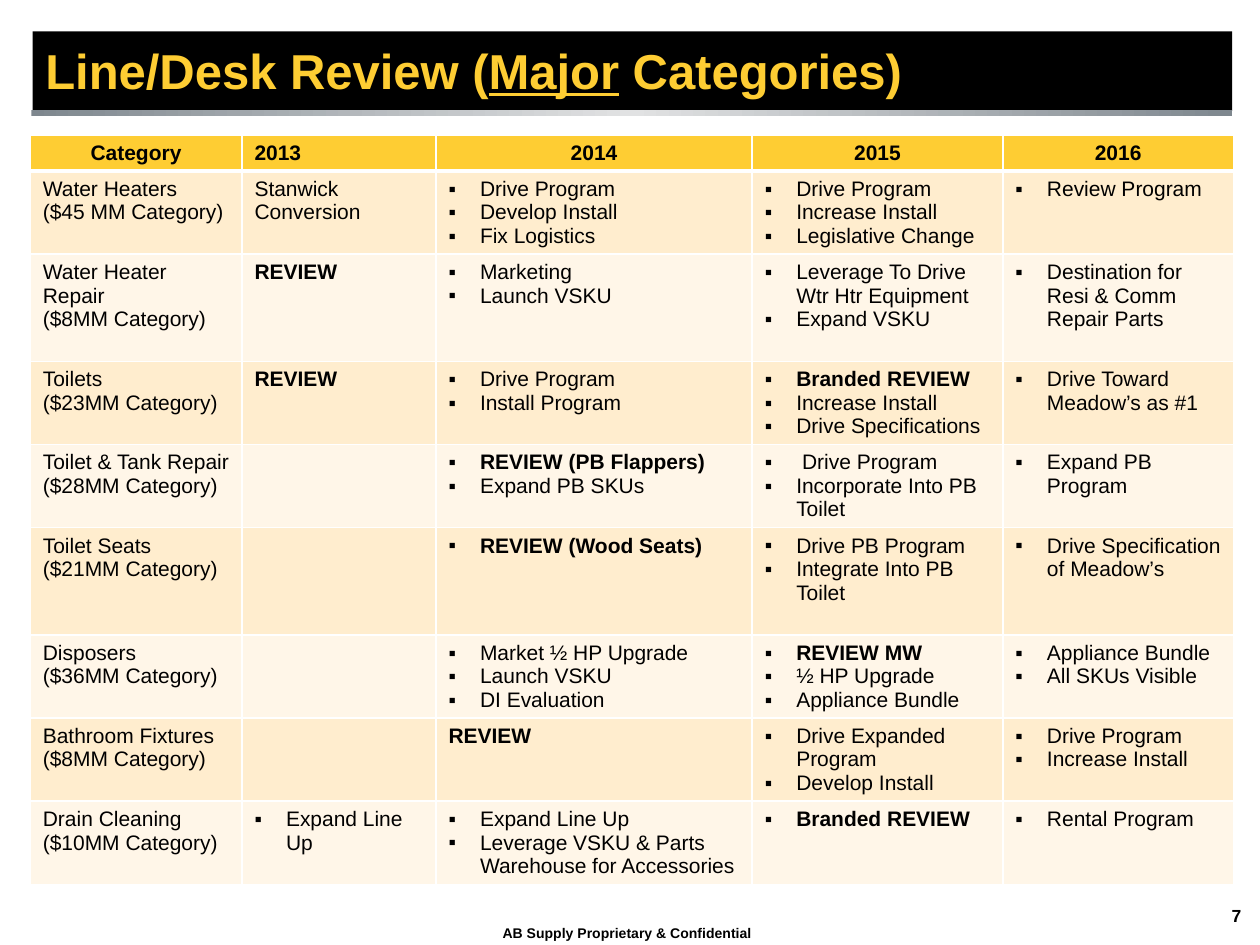
from copy import deepcopy

from lxml import etree
from pptx import Presentation
from pptx import util as u
from pptx.dml.color import RGBColor
from pptx.enum import shapes, text
from pptx.oxml import ns

INK = {"black": "000000", "gold": "FECD33", "white": "FFFFFF",
       "dark": "FFEDCE", "light": "FFF6E8", "steel": "7E878E", "shine": "E1E2E3"}
FONT = "Arial"
LEFT, MID = text.PP_ALIGN.LEFT, text.PP_ALIGN.CENTER

WIDTHS = [1.68, 1.54, 2.51, 1.99, 1.83]
HEAD = ["Category", "2013", "2014", "2015", "2016"]
HEAD_H, ROW_H, TALL_H = 0.28, 0.66, 0.85
TALL = {2, 5}
PLAIN = {"REVIEW", "Stanwick Conversion"}

# One row per category; each cell is a list of lines
ROWS = [
    [["Water Heaters", "($45 MM Category)"], ["Stanwick Conversion"],
     ["Drive Program", "Develop Install", "Fix Logistics"],
     ["Drive Program", "Increase Install", "Legislative Change"],
     ["Review Program"]],
    [["Water Heater Repair", "($8MM Category)"], ["REVIEW"],
     ["Marketing", "Launch VSKU"],
     ["Leverage To Drive Wtr Htr Equipment", "Expand VSKU"],
     ["Destination for Resi & Comm Repair Parts"]],
    [["Toilets", "($23MM Category)"], ["REVIEW"],
     ["Drive Program", "Install Program"],
     ["Branded REVIEW", "Increase Install", "Drive Specifications"],
     ["Drive Toward Meadow’s as #1"]],
    [["Toilet & Tank Repair", "($28MM Category)"], [],
     ["REVIEW (PB Flappers)", "Expand PB SKUs"],
     [" Drive Program", "Incorporate Into PB Toilet"],
     ["Expand PB Program"]],
    [["Toilet Seats", "($21MM Category)"], [],
     ["REVIEW (Wood Seats)"],
     ["Drive PB Program", "Integrate Into PB Toilet"],
     ["Drive Specification of Meadow’s"]],
    [["Disposers", "($36MM Category)"], [],
     ["Market ½ HP Upgrade", "Launch VSKU", "DI Evaluation"],
     ["REVIEW MW", "½ HP Upgrade", "Appliance Bundle"],
     ["Appliance Bundle", "All SKUs Visible"]],
    [["Bathroom Fixtures", "($8MM Category)"], [],
     ["REVIEW"],
     ["Drive Expanded Program", "Develop Install"],
     ["Drive Program", "Increase Install"]],
    [["Drain Cleaning", "($10MM Category)"], ["Expand Line Up"],
     ["Expand Line Up", "Leverage VSKU & Parts Warehouse for Accessories"],
     ["Branded REVIEW"],
     ["Rental Program"]],
]


def rgb(name):
    return RGBColor.from_string(INK[name])


def inch(box):
    return [u.Inches(v) for v in box]


def style(font, size, bold=False, ink="black"):
    font.name, font.size, font.bold = FONT, u.Pt(size), bold
    font.color.rgb = rgb(ink)


def add_run(para, words, *look):
    run = para.add_run()
    run.text = words
    style(run.font, *look)
    return run


def add_bar(slide, box):
    bar = slide.shapes.add_shape(shapes.MSO_SHAPE.RECTANGLE, *inch(box))
    bar.shadow.inherit = False
    bar.line.fill.background()
    return bar


def add_title(slide, box):
    x, y, w, h = box
    # Black band
    band = add_bar(slide, (x, y, w, h))
    band.fill.solid()
    band.fill.fore_color.rgb = rgb("black")
    # Metallic strip below it
    strip = add_bar(slide, (x - 0.01, y + h - 0.01, w + 0.01, 0.05))
    strip.fill.gradient()
    strip.fill.gradient_angle = 0
    stops = strip._element.spPr.find(".//" + ns.qn("a:gsLst"))
    stops.insert(1, deepcopy(stops[0]))
    for stop, spot, ink in zip(strip.fill.gradient_stops, (0, 0.5, 1),
                               ("steel", "shine", "steel")):
        stop.position = spot
        stop.color.rgb = rgb(ink)
    # Heading, brought in front of the band
    title = slide.shapes.title
    title.left, title.top, title.width, title.height = inch((x, y - 0.01, 7.09, h))
    slide.shapes._spTree.append(title._element)
    frame = title.text_frame
    frame.word_wrap = True
    frame.auto_size = text.MSO_AUTO_SIZE.NONE
    frame.vertical_anchor = text.MSO_ANCHOR.MIDDLE
    para = frame.paragraphs[0]
    para.alignment = LEFT
    for words in ("Line/Desk Review (", "Major", " Categories)"):
        run = add_run(para, words, 28, True, "gold")
        run.font.underline = words == "Major"


def add_bullet(para):
    props = para._p.get_or_add_pPr()
    props.set("marL", str(u.Inches(0.25)))
    props.set("indent", str(u.Inches(-0.25)))
    etree.SubElement(props, ns.qn("a:buFont"), typeface=FONT)
    etree.SubElement(props, ns.qn("a:buChar"), char="▪")


def add_edges(cell, row):
    props = cell._tc.get_or_add_tcPr()
    thick = {0: "lnB", 1: "lnT"}.get(row)
    for spot, side in enumerate(("lnL", "lnR", "lnT", "lnB")):
        width = u.Pt(3 if side == thick else 1)
        line = etree.Element(ns.qn("a:" + side), w=str(width))
        fill = etree.SubElement(line, ns.qn("a:solidFill"))
        etree.SubElement(fill, ns.qn("a:srgbClr"), val=INK["white"])
        props.insert(spot, line)


def fill_cell(cell, lines, row, col):
    cell.fill.solid()
    cell.fill.fore_color.rgb = rgb(
        "gold" if row == 0 else "dark" if row % 2 else "light")
    add_edges(cell, row)
    frame = cell.text_frame
    for i, words in enumerate(lines):
        para = frame.add_paragraph() if i else frame.paragraphs[0]
        para.alignment = MID if row == 0 and col != 1 else LEFT
        if row and col and words not in PLAIN:
            add_bullet(para)
        add_run(para, words, 12, row == 0 or "REVIEW" in words)
    if not lines:
        style(frame.paragraphs[0].font, 12)


def add_grid(slide, box):
    data = [[[name] for name in HEAD]] + ROWS
    grid = slide.shapes.add_table(len(data), len(HEAD), *inch(box)).table
    for col, width in zip(grid.columns, WIDTHS):
        col.width = u.Inches(width)
    for r, cells in enumerate(data):
        high = HEAD_H if r == 0 else TALL_H if r in TALL else ROW_H
        grid.rows[r].height = u.Inches(high)
        for c, lines in enumerate(cells):
            fill_cell(grid.cell(r, c), lines, r, c)


def add_note(slide, box, words, size, align, anchor, wrap):
    frame = slide.shapes.add_textbox(*inch(box)).text_frame
    frame.word_wrap = wrap
    frame.vertical_anchor = anchor
    para = frame.paragraphs[0]
    para.alignment = align
    add_run(para, words, size, True)


def main():
    deck = Presentation()
    deck.slide_width, deck.slide_height = u.Inches(10), u.Inches(7.5)
    slide = deck.slides.add_slide(deck.slide_layouts[5])
    add_title(slide, (0.26, 0.25, 9.52, 0.63))
    add_grid(slide, (0.24, 1.07, 9.55, 5.94))
    # Footer
    add_note(slide, (7.62, 7.13, 2.33, 0.35), "7", 10,
             text.PP_ALIGN.RIGHT, text.MSO_ANCHOR.TOP, True)
    add_note(slide, (3.89, 7.29, 2.21, 0.23), "AB Supply Proprietary & Confidential",
             8, LEFT, text.MSO_ANCHOR.MIDDLE, False)
    deck.save("out.pptx")


if __name__ == "__main__":
    main()
